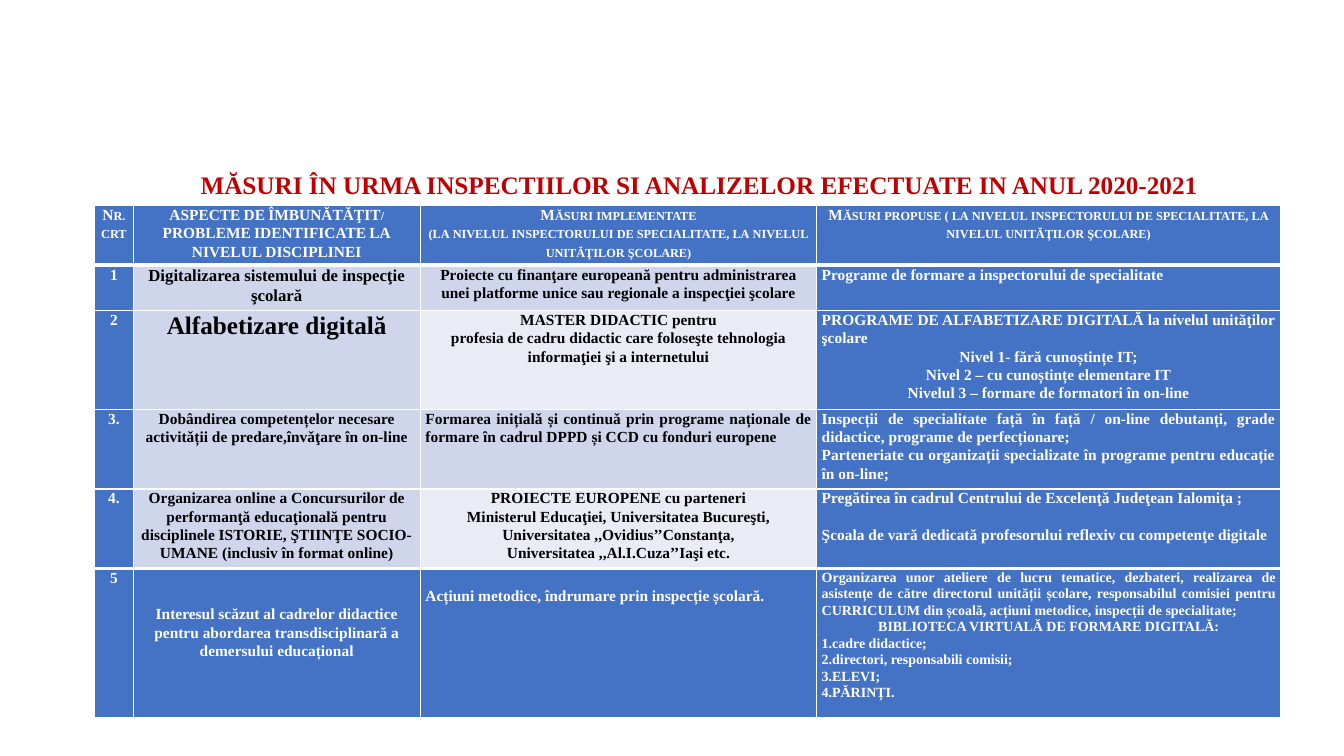
from lxml import etree
from pptx import Presentation
from pptx.dml.color import RGBColor
from pptx.enum.text import MSO_AUTO_SIZE as AutoSize, PP_ALIGN as Align
from pptx.oxml.ns import qn
from pptx.util import Inches, Pt

COLORS = {"title": "C00000", "blue": "4472C4", "band": "CFD5EA",
          "pale": "E9EBF5", "white": "FFFFFF", "black": "000000"}
FONT = "Times New Roman"
TITLE = "MĂSURI ÎN URMA INSPECTIILOR SI ANALIZELOR EFECTUATE IN ANUL 2020-2021"


def cell(*lines, fill="blue", align="c", size=11, centred=(), top=0, gaps=None):
    """centred: indexes of centred lines; top: upper margin; gaps: index -> points before."""
    return dict(lines=lines, fill=fill, align=align, size=size,
                centred=centred, top=top, gaps=gaps or {})


COL_WIDTHS = [0.38, 2.85, 3.93, 4.6]
ROW_HEIGHTS = [0.59, 0.45, 0.98, 0.79, 0.79, 1.48]
ROWS = [
    [cell("Nr.", "crt"),
     cell("ASPECTE DE ÎMBUNĂTĂŢIT/ PROBLEME IDENTIFICATE LA NIVELUL DISCIPLINEI"),
     cell("Măsuri implementate",
          "(la nivelul inspectorului de specialitate, la nivelul unităţilor şcolare)"),
     cell("Măsuri propuse ( la nivelul inspectorului de specialitate, "
          "la nivelul unităţilor şcolare)")],
    [cell("1"),
     cell("Digitalizarea sistemului de inspecţie şcolară", fill="band", size=12),
     cell("Proiecte cu finanţare europeană pentru administrarea unei platforme "
          "unice sau regionale a inspecţiei şcolare", fill="band"),
     cell("Programe de formare a inspectorului de specialitate", align="j")],
    [cell("2"),
     cell("Alfabetizare digitală", fill="band", size=18),
     cell("MASTER DIDACTIC pentru",
          "profesia de cadru didactic care foloseşte tehnologia informaţiei "
          "şi a internetului", fill="pale"),
     cell("PROGRAME DE ALFABETIZARE DIGITALĂ la nivelul unităţilor şcolare",
          "Nivel 1- fără cunoștințe IT;",
          "Nivel 2 – cu cunoștințe elementare IT",
          "Nivelul 3 – formare de formatori în on-line",
          align="j", centred=(1, 2, 3))],
    [cell("3."),
     cell("Dobândirea competențelor necesare activitǎții de predare,învǎţare în on-line",
          fill="band"),
     cell("Formarea inițialǎ și continuǎ prin programe naționale de formare "
          "în cadrul DPPD și CCD cu fonduri europene", fill="band", align="j"),
     cell("Inspecții de specialitate față în față / on-line debutanți, grade "
          "didactice, programe de perfecționare;",
          "Parteneriate cu organizații specializate în programe pentru educație "
          "în on-line;", align="j")],
    [cell("4."),
     cell("Organizarea online a Concursurilor de performanţă educaţională pentru "
          "disciplinele ISTORIE, ŞTIINŢE SOCIO-UMANE (inclusiv în format online)",
          fill="band"),
     cell("PROIECTE EUROPENE cu parteneri",
          "Ministerul Educaţiei, Universitatea Bucureşti, Universitatea "
          ",,Ovidius’’Constanţa, Universitatea ,,Al.I.Cuza’’Iaşi etc.", fill="pale"),
     cell("Pregătirea în cadrul Centrului de Excelenţă Judeţean Ialomiţa ;",
          "Şcoala de vară dedicată profesorului reflexiv cu competenţe digitale",
          align="j", gaps={1: 13})],
    [cell("5"),
     cell("Interesul scăzut al cadrelor didactice pentru abordarea "
          "transdisciplinară a demersului educațional", top=0.36),
     cell("Acțiuni metodice, îndrumare prin inspecție școlară.", align="j", top=0.18),
     cell("Organizarea unor ateliere de lucru tematice, dezbateri, realizarea de "
          "asistențe de către directorul unității școlare, responsabilul comisiei "
          "pentru CURRICULUM din școală, acțiuni metodice, inspecții de specialitate;",
          "BIBLIOTECA VIRTUALĂ DE FORMARE DIGITALĂ:",
          "1.cadre didactice;", "2.directori, responsabili comisii;",
          "3.ELEVI;", "4.PĂRINȚI.", align="j", size=10, centred=(1,))],
]


def rgb(name):
    return RGBColor.from_string(COLORS[name])


def style_run(r, size, color, small_caps=False):
    r.font.name, r.font.size, r.font.bold = FONT, Pt(size), True
    r.font.color.rgb = rgb(color)
    if small_caps:
        r._r.get_or_add_rPr().set("cap", "small")


def add_borders(tc, top, bottom):
    tcPr = tc._tc.get_or_add_tcPr()
    for side, width in (("L", 1), ("R", 1), ("T", top), ("B", bottom)):
        ln = etree.SubElement(tcPr, qn(f"a:ln{side}"), w=str(Pt(width)))
        solid = etree.SubElement(ln, qn("a:solidFill"))
        etree.SubElement(solid, qn("a:srgbClr"), val=COLORS["white"])


def fill_cell(tc, data, row):
    thick_edges = (0, len(ROWS) - 2)  # thick rule below the header and above the last row
    add_borders(tc, 3 if row - 1 in thick_edges else 1, 3 if row in thick_edges else 1)
    tc.fill.solid()
    tc.fill.fore_color.rgb = rgb(data["fill"])
    tc.margin_left = tc.margin_right = Inches(0.05)
    tc.margin_top, tc.margin_bottom = Inches(data["top"]), 0
    tc.text_frame.text = "\n".join(data["lines"])
    color = "white" if data["fill"] == "blue" else "black"
    for i, p in enumerate(tc.text_frame.paragraphs):
        centre = data["align"] == "c" or i in data["centred"]
        p.alignment = Align.CENTER if centre else Align.JUSTIFY
        p.line_spacing = 1.07
        if i in data["gaps"]:
            p.space_before = Pt(data["gaps"][i])
        style_run(p.runs[0], data["size"], color, small_caps=row == 0)


prs = Presentation()
prs.slide_width, prs.slide_height = Inches(13.33), Inches(7.5)
s = prs.slides.add_slide(prs.slide_layouts[6])

# Title
sp = s.shapes.add_textbox(Inches(1.89), Inches(1.63), Inches(10.19), Inches(0.4))
tf = sp.text_frame
tf.text = TITLE
tf.word_wrap = False
tf.auto_size = AutoSize.SHAPE_TO_FIT_TEXT
style_run(tf.paragraphs[0].runs[0], 18, "title")

# Table of measures
table = s.shapes.add_table(len(ROWS), len(COL_WIDTHS), Inches(0.94), Inches(2.04),
                           Inches(sum(COL_WIDTHS)), Inches(sum(ROW_HEIGHTS))).table
table.horz_banding = False
for column, width in zip(table.columns, COL_WIDTHS):
    column.width = Inches(width)
for i, (height, cells) in enumerate(zip(ROW_HEIGHTS, ROWS)):
    table.rows[i].height = Inches(height)
    for j, data in enumerate(cells):
        fill_cell(table.cell(i, j), data, i)

prs.save("out.pptx")
